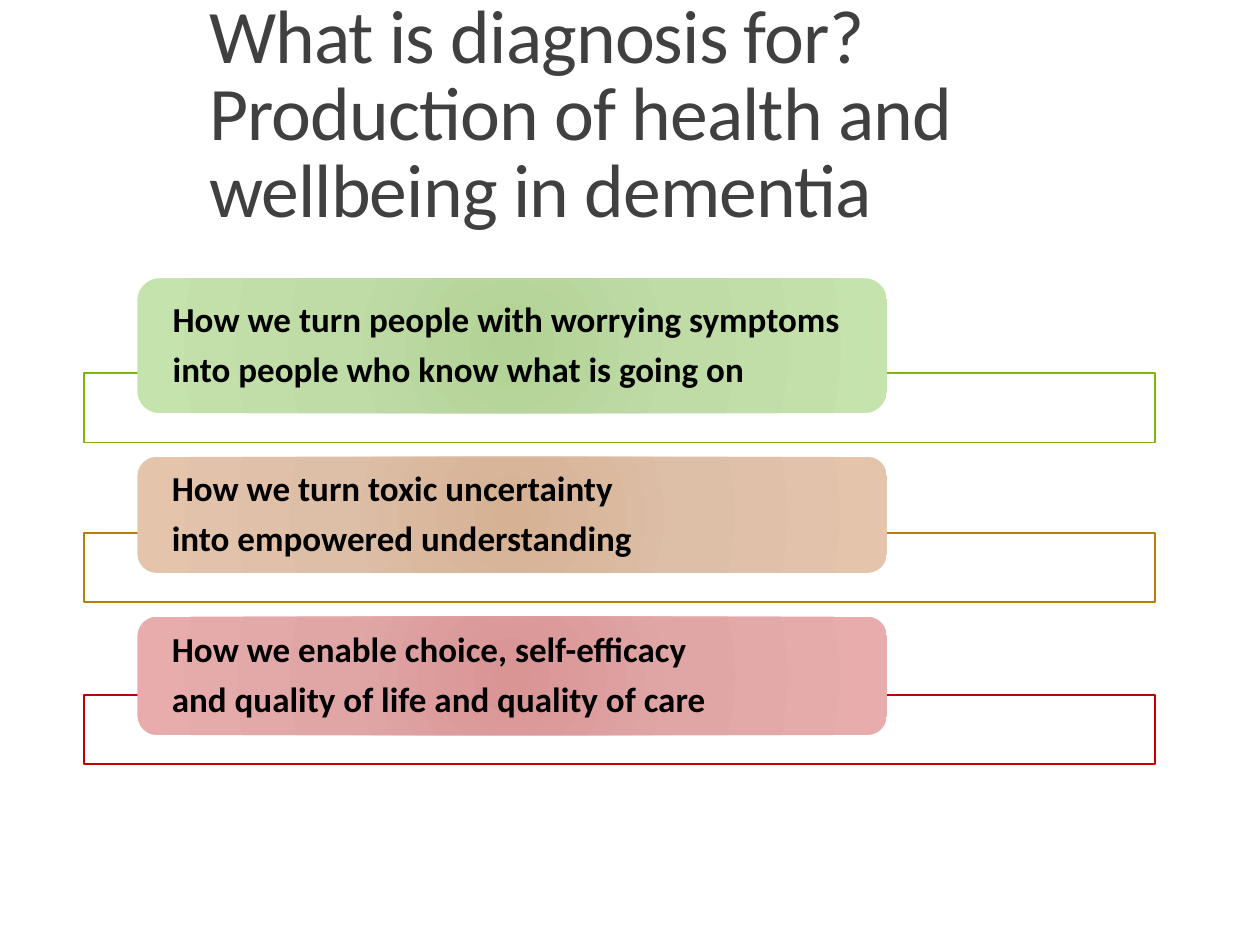
from dataclasses import dataclass
from typing import Any

from lxml.etree import SubElement
from pptx import Presentation
from pptx.dml.color import RGBColor as Rgb
from pptx.enum.shapes import MSO_SHAPE as Geometry
from pptx.enum.text import MSO_ANCHOR as Anchor, MSO_AUTO_SIZE as AutoSize, PP_ALIGN as Align
from pptx.oxml.ns import qn
from pptx.util import Cm, Pt


@dataclass(frozen=True)
class Theme:
    font: str = "Calibri"
    title_size: float = 43.2
    body_size: float = 20
    title_color: str = "404040"
    body_color: str = "000000"
    band_color: str = "FFFFFF"
    band_alpha: int = 90


@dataclass(frozen=True)
class Purpose:
    lines: tuple[str, str]
    outline: str
    glow: tuple[str, str, str]  # centre to edge
    height: float  # of the label, in cm


THEME = Theme()
TITLE = "What is diagnosis for? Production of health and wellbeing in dementia"
PURPOSES = (
    Purpose(("How we turn people with worrying symptoms",
             "into people who know what is going on"),
            "7EB606", ("B2D395", "BFDBA6", "C5E3AD"), 2.72),
    Purpose(("How we turn toxic uncertainty", "into empowered understanding"),
            "BB7C03", ("D6B194", "DDBEA6", "E5C4AC"), 2.34),
    Purpose(("How we enable choice, self-efficacy",
             "and quality of life and quality of care"),
            "C00000", ("D99494", "E0A6A6", "E8ACAC"), 2.39),
)
GLOW_STOPS = (0, 45, 100)
BAND_LEFT, BAND_WIDTH, BAND_HEIGHT = 1.7, 21.59, 1.4
LABEL_LEFT, LABEL_WIDTH = 2.77, 15.11
FIRST_TOP, OVERLAP, GAP = 5.61, 0.81, 0.29


def apply(target: Any, values: dict[str, Any]) -> None:
    for name, value in values.items():
        setattr(target, name, value)


def style_font(font: Any, size: float, color: str, bold: bool) -> None:
    apply(font, {"name": THEME.font, "size": Pt(size), "bold": bold})
    font.color.rgb = Rgb.from_string(color)


def fill_glow(shape: Any, colors: tuple[str, str, str]) -> None:
    """Replace the default gradient by a circular one."""
    shape.fill.gradient()
    gradient = shape.fill._xPr.find(qn("a:gradFill"))
    for child in list(gradient):
        gradient.remove(child)
    stops = SubElement(gradient, qn("a:gsLst"))
    for position, color in zip(GLOW_STOPS, colors):
        stop = SubElement(stops, qn("a:gs"), pos=str(position * 1000))
        SubElement(stop, qn("a:srgbClr"), val=color)
    circle = SubElement(gradient, qn("a:path"), {"path": "circle"})
    SubElement(circle, qn("a:fillToRect"), {side: "100000" for side in "ltrb"})


def add_title(slide: Any) -> None:
    title = slide.shapes.title
    apply(title, {"left": Cm(3.96), "top": Cm(0.76), "width": Cm(19.28), "height": Cm(4.06)})
    frame = title.text_frame
    apply(frame, {"text": TITLE, "word_wrap": True, "auto_size": AutoSize.NONE,
                  "vertical_anchor": Anchor.BOTTOM})
    heading = frame.paragraphs[0]
    apply(heading, {"alignment": Align.LEFT, "line_spacing": 0.85, "space_before": Pt(0)})
    wording = heading.runs[0]
    style_font(wording.font, THEME.title_size, THEME.title_color, False)
    wording.font._element.set("spc", "-50")


def add_band(slide: Any, top: float, outline: str) -> None:
    band = slide.shapes.add_shape(Geometry.RECTANGLE, Cm(BAND_LEFT), Cm(top),
                                  Cm(BAND_WIDTH), Cm(BAND_HEIGHT))
    band.shadow.inherit = False
    band.fill.solid()
    band.fill.fore_color.rgb = Rgb.from_string(THEME.band_color)
    tint = band.fill._xPr.find(qn("a:solidFill"))[0]
    SubElement(tint, qn("a:alpha"), val=str(THEME.band_alpha * 1000))
    band.line.color.rgb = Rgb.from_string(outline)
    band.line.width = Pt(1)


def add_label(slide: Any, top: float, purpose: Purpose) -> None:
    label = slide.shapes.add_shape(Geometry.ROUNDED_RECTANGLE, Cm(LABEL_LEFT), Cm(top),
                                   Cm(LABEL_WIDTH), Cm(purpose.height))
    label.shadow.inherit = False
    label.line.fill.background()
    fill_glow(label, purpose.glow)
    frame = label.text_frame
    apply(frame, {"word_wrap": True, "vertical_anchor": Anchor.MIDDLE,
                  "margin_left": Cm(0.58), "margin_right": Cm(0.58),
                  "margin_top": 0, "margin_bottom": 0})
    for index, line in enumerate(purpose.lines):
        paragraph = frame.add_paragraph() if index else frame.paragraphs[0]
        apply(paragraph, {"text": line, "alignment": Align.LEFT,
                          "line_spacing": 0.9, "space_after": Pt(7)})
        style_font(paragraph.runs[0].font, THEME.body_size, THEME.body_color, True)


def main() -> None:
    deck = Presentation()
    apply(deck, {"slide_width": Cm(25.4), "slide_height": Cm(19.05)})
    slide = deck.slides.add_slide(deck.slide_layouts.get_by_name("Title Only"))
    add_title(slide)
    top = FIRST_TOP
    for purpose in PURPOSES:
        band_top = top + purpose.height - OVERLAP
        add_band(slide, band_top, purpose.outline)
        add_label(slide, top, purpose)
        top = band_top + BAND_HEIGHT + GAP
    deck.save("out.pptx")


if __name__ == "__main__":
    main()
